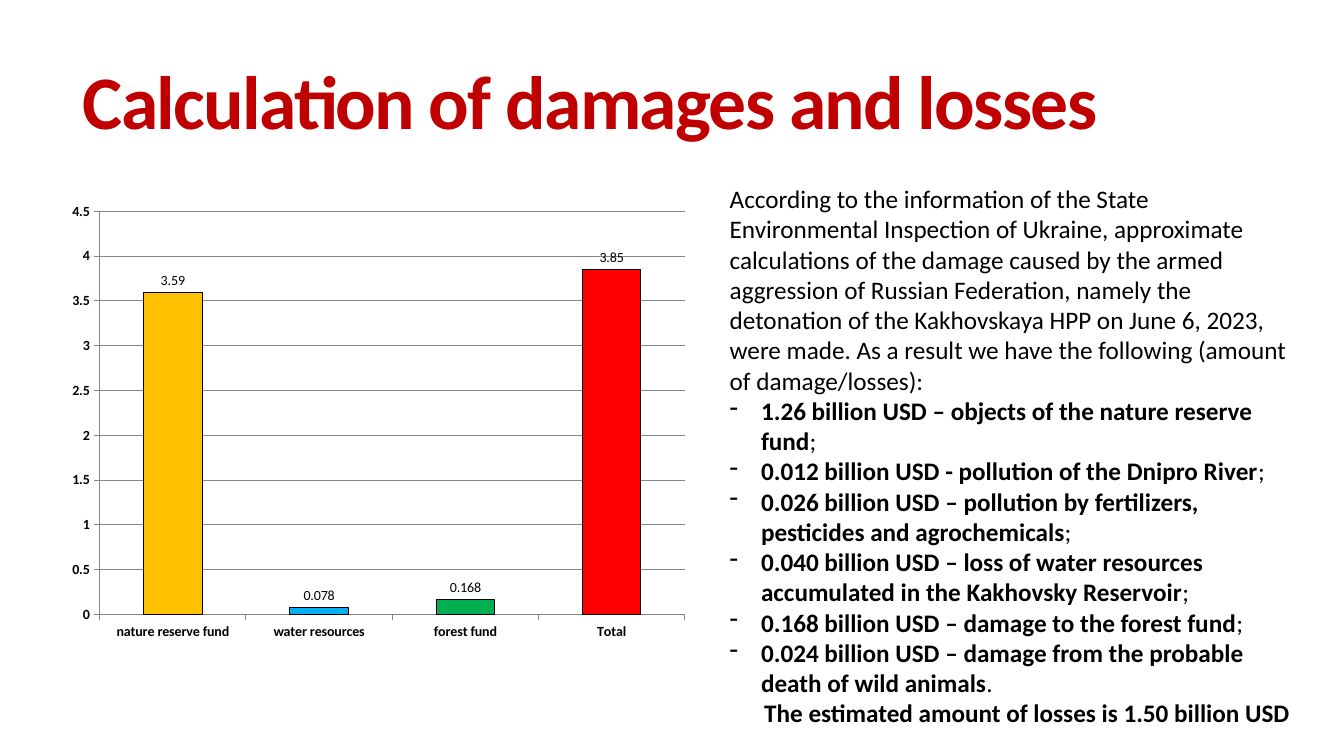
import pptx
import pptx.chart.data
import pptx.dml.color
import pptx.enum.chart
import pptx.enum.text
import pptx.util
from lxml import etree
from pptx.oxml.ns import qn
from pptx.util import Cm, Pt

# Content
FONT = "Calibri"
TITLE = "Calculation of damages and losses"
INTRO = (
    "According to the information of the State Environmental Inspection of Ukraine, "
    "approximate calculations of the damage caused by the armed aggression of Russian "
    "Federation, namely the detonation of the Kakhovskaya HPP on June 6, 2023, were made. "
    "As a result we have the following (amount of damage/losses):"
)
LOSSES = [
    "1.26 billion USD – objects of the nature reserve fund",
    "0.012 billion USD - pollution of the Dnipro River",
    "0.026 billion USD – pollution by fertilizers, pesticides and agrochemicals",
    "0.040 billion USD – loss of water resources accumulated in the Kakhovsky Reservoir",
    "0.168 billion USD – damage to the forest fund",
    "0.024 billion USD – damage from the probable death of wild animals",
]
ESTIMATE = "The estimated amount of losses is 1.50 billion USD"
DAMAGES = [
    ("nature reserve fund", 3.59, "FFC000"),
    ("water resources", 0.078, "00B0F0"),
    ("forest fund", 0.168, "00B050"),
    ("Total", 3.85, "FF0000"),
]


def colour(value):
    return pptx.dml.color.RGBColor.from_string(value)


def style(font, size, bold=False, shade="000000"):
    font.name = FONT
    font.size = Pt(size)
    font.bold = bold
    font.color.rgb = colour(shade)


def add_span(para, text, size=18, bold=False, shade="000000"):
    span = para.add_run()
    span.text = text
    style(span.font, size, bold, shade)
    return span


def indent(para, left, first=0):
    properties = para._p.get_or_add_pPr()
    properties.set("marL", str(Cm(left)))
    properties.set("indent", str(Cm(first)))
    return properties


deck = pptx.Presentation()
deck.slide_width, deck.slide_height = Cm(33.87), Cm(19.05)
page = deck.slides.add_slide(deck.slide_layouts[5])

# Title
title = page.shapes.title
title.left, title.top, title.width, title.height = Cm(1.83), Cm(0.25), Cm(29.92), Cm(4.85)
frame = title.text_frame
frame.auto_size = pptx.enum.text.MSO_AUTO_SIZE.NONE
frame.vertical_anchor = pptx.enum.text.MSO_ANCHOR.MIDDLE
para = frame.paragraphs[0]
para.alignment = pptx.enum.text.PP_ALIGN.LEFT
para.line_spacing = 0.85
span = add_span(para, TITLE, 54, True, "C00000")
span.font._element.set("spc", "-120")

# Explanation with the list of losses
box = page.shapes.add_textbox(Cm(18.14), Cm(4.5), Cm(14.86), Cm(12.57))
frame = box.text_frame
frame.word_wrap = True
frame.auto_size = pptx.enum.text.MSO_AUTO_SIZE.SHAPE_TO_FIT_TEXT
add_span(frame.paragraphs[0], INTRO)
for number, loss in enumerate(LOSSES, 1):
    para = frame.add_paragraph()
    bullet = etree.SubElement(indent(para, 0.79, -0.79), qn("a:buChar"))
    bullet.set("char", "-")
    add_span(para, loss, bold=True)
    add_span(para, "." if number == len(LOSSES) else ";")
para = frame.add_paragraph()
indent(para, 0.87)
add_span(para, ESTIMATE, bold=True)

# Column chart of damages
names, values, fills = zip(*DAMAGES)
data = pptx.chart.data.CategoryChartData()
data.categories = names
data.add_series("Series 1", values)
chart = page.shapes.add_chart(
    pptx.enum.chart.XL_CHART_TYPE.COLUMN_CLUSTERED,
    Cm(1.5), Cm(4.9), Cm(16.08), Cm(11.46), data,
).chart
chart.has_legend = False
chart.has_title = False
style(chart.font, 10)

for axis in (chart.category_axis, chart.value_axis):
    style(axis.tick_labels.font, 10, True)
    axis.format.line.color.rgb = colour("868686")
    axis.major_tick_mark = pptx.enum.chart.XL_TICK_MARK.OUTSIDE
chart.value_axis.minimum_scale = 0
chart.value_axis.maximum_scale = 4.5
chart.value_axis.major_unit = 0.5
chart.value_axis.major_gridlines.format.line.color.rgb = colour("868686")

plot = chart.plots[0]
plot.gap_width = 150
plot.vary_by_categories = False
plot.has_data_labels = True
plot.data_labels.show_value = True
plot.data_labels.position = pptx.enum.chart.XL_LABEL_POSITION.OUTSIDE_END
style(plot.data_labels.font, 10)
for index, fill in enumerate(fills):
    column = plot.series[0].points[index].format
    column.fill.solid()
    column.fill.fore_color.rgb = colour(fill)
    column.line.color.rgb = colour("000000")
    column.line.width = Pt(0.75)

deck.save("out.pptx")
